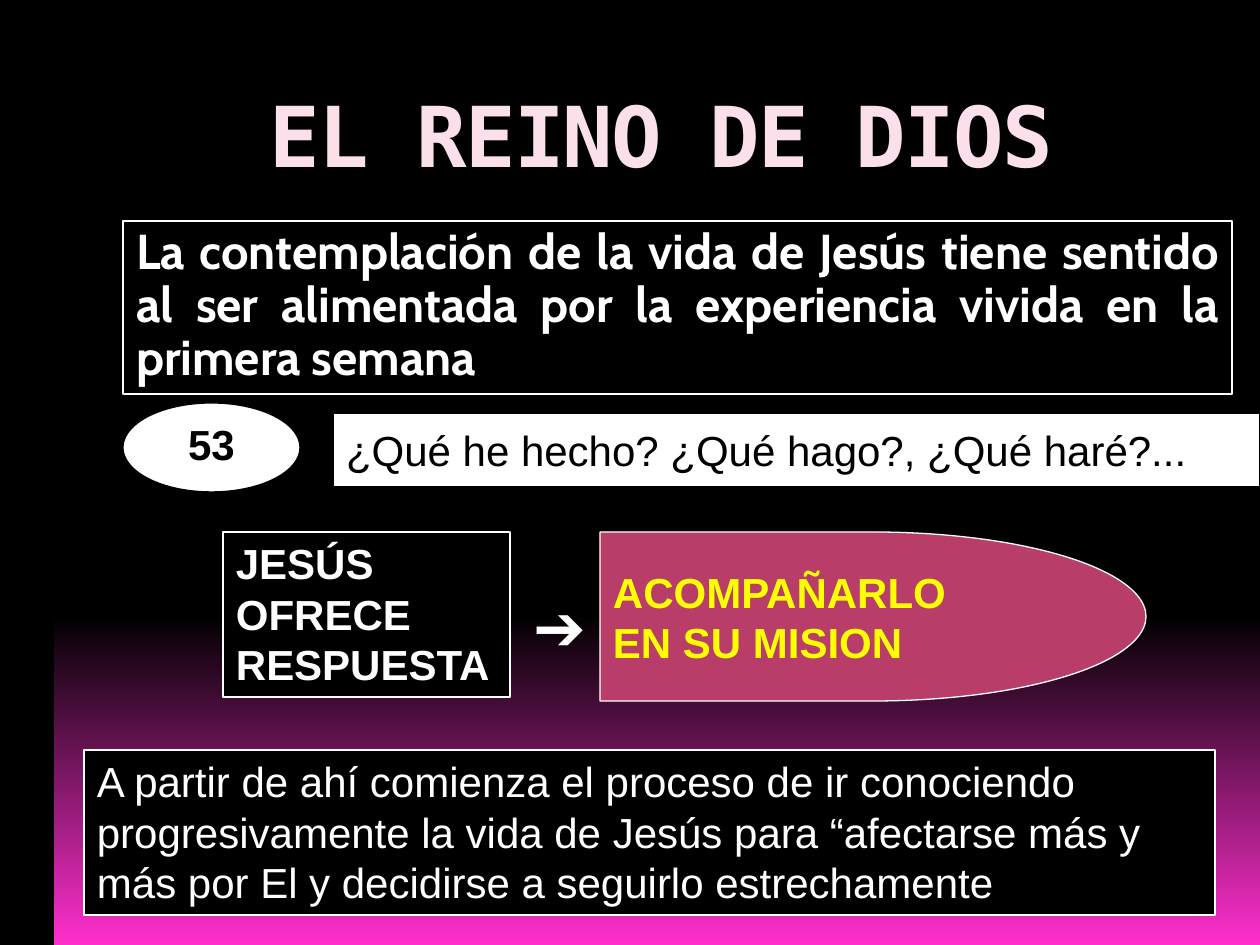
"""Builds the slide "El Reino de Dios"."""
import pptx
import pptx.dml.color
import pptx.enum.shapes
import pptx.enum.text
import pptx.oxml.ns
import pptx.util
from lxml import etree

COLORS = {
    "black": "000000",
    "white": "FFFFFF",
    "magenta": "FF2FCD",
    "blush": "FBE0EC",
    "raspberry": "B83D68",
    "yellow": "FFFF00",
}
SHAPES = pptx.enum.shapes.MSO_SHAPE
ALIGN = pptx.enum.text.PP_ALIGN
ANCHOR = pptx.enum.text.MSO_ANCHOR


def px(length):
    return pptx.util.Emu(round(length * 914400 / 126))


def rgb(name):
    return pptx.dml.color.RGBColor.from_string(COLORS[name])


class SlideBuilder:
    def __init__(self, slide, font="Arial", size=24):
        self.slide = slide
        self.font = font
        self.size = size

    def background(self, start, end, hold):
        fill = self.slide.background.fill
        fill.gradient()
        fill.gradient_angle = 270
        for stop, color, position in zip(fill.gradient_stops, (start, end), (hold, 1)):
            stop.color.rgb = rgb(color)
            stop.position = position

    def place(self, shape, box):
        shape.left, shape.top, shape.width, shape.height = map(px, box)

    def paint(self, shape, fill, line=None):
        shape.fill.solid()
        shape.fill.fore_color.rgb = rgb(fill)
        if line:
            shape.line.color.rgb = rgb(line)
            shape.line.width = pptx.util.Pt(0.75)
        else:
            shape.line.fill.background()

    def set_text(self, shape, lines, color, bold=False, size=None, font=None,
                 align=ALIGN.LEFT, anchor=ANCHOR.TOP, wrap=True, inset=6):
        frame = shape.text_frame
        frame.auto_size = pptx.enum.text.MSO_AUTO_SIZE.NONE
        frame.word_wrap = wrap
        frame.vertical_anchor = anchor
        frame.margin_left = frame.margin_right = px(13)
        frame.margin_top = frame.margin_bottom = px(inset)
        for index, line in enumerate(lines):
            paragraph = frame.add_paragraph() if index else frame.paragraphs[0]
            paragraph.alignment = align
            run = paragraph.add_run()
            run.text = line
            run.font.name = font or self.font
            run.font.size = pptx.util.Pt(size or self.size)
            run.font.bold = bold
            run.font.color.rgb = rgb(color)

    def title(self, text, box):
        shape = self.slide.shapes.title
        self.place(shape, box)
        self.set_text(shape, [text], "blush", True, 48, "DejaVu Sans Mono",
                      ALIGN.CENTER, ANCHOR.MIDDLE)
        run = shape.text_frame.paragraphs[0].runs[0]
        run._r.get_or_add_rPr().set("spc", "-100")

    def body(self, text, box):
        shape = self.slide.placeholders[1]
        self.place(shape, box)
        self.paint(shape, "black", "white")
        self.set_text(shape, [text], "white", True, 28, "Cabin", ALIGN.JUSTIFY)
        paragraph = shape.text_frame.paragraphs[0]
        paragraph.line_spacing = 0.9
        paragraph.space_before = pptx.util.Pt(7)
        properties = paragraph._p.get_or_add_pPr()
        properties.set("marL", "0")
        properties.set("indent", "0")
        etree.SubElement(properties, pptx.oxml.ns.qn("a:buNone"))

    def shape(self, kind, box, fill, line=None, lines=(), color="white", **style):
        shape = self.slide.shapes.add_shape(kind, *map(px, box))
        shape.shadow.inherit = False
        self.paint(shape, fill, line)
        if lines:
            self.set_text(shape, lines, color, **style)

    def label(self, text, box, color, **style):
        shape = self.slide.shapes.add_textbox(*map(px, box))
        self.set_text(shape, [text], color, **style)


def main():
    presentation = pptx.Presentation()
    presentation.slide_width, presentation.slide_height = px(1260), px(945)
    slide = presentation.slides.add_slide(presentation.slide_layouts[1])
    builder = SlideBuilder(slide)

    builder.background("black", "magenta", 0.65)
    builder.title("EL REINO DE DIOS", (126, 71, 1071, 126))
    builder.body(
        "La contemplación de la vida de Jesús tiene sentido al ser alimentada "
        "por la experiencia vivida en la primera semana",
        (123, 221, 1109, 173))

    builder.shape(SHAPES.OVAL, (123, 403, 177, 89), "white", "black")
    builder.label("53", (175, 413, 97, 63), "black", bold=True)
    builder.shape(SHAPES.RECTANGLE, (333, 413, 927, 74), "white", "black",
                  ["¿Qué he hecho? ¿Qué hago?, ¿Qué haré?..."], "black", inset=11)

    builder.shape(SHAPES.RECTANGLE, (223, 532, 287, 165), "black", "white",
                  ["JESÚS OFRECE RESPUESTA"], bold=True)
    builder.shape(SHAPES.FLOWCHART_DELAY, (600, 532, 546, 169), "raspberry", "white",
                  ["ACOMPAÑARLO", "EN SU MISION"], "yellow", bold=True,
                  anchor=ANCHOR.MIDDLE, wrap=False)
    builder.shape(SHAPES.RECTANGLE, (84, 750, 1131, 165), "black", "white",
                  ["A partir de ahí comienza el proceso de ir conociendo "
                   "progresivamente la vida de Jesús para “afectarse más y más "
                   "por El y decidirse a seguirlo estrechamente"])
    builder.label("➔", (520, 582, 110, 88), "white", size=36)
    builder.shape(SHAPES.RECTANGLE, (-35, 0, 89, 945), "black")

    presentation.save("out.pptx")


if __name__ == "__main__":
    main()
